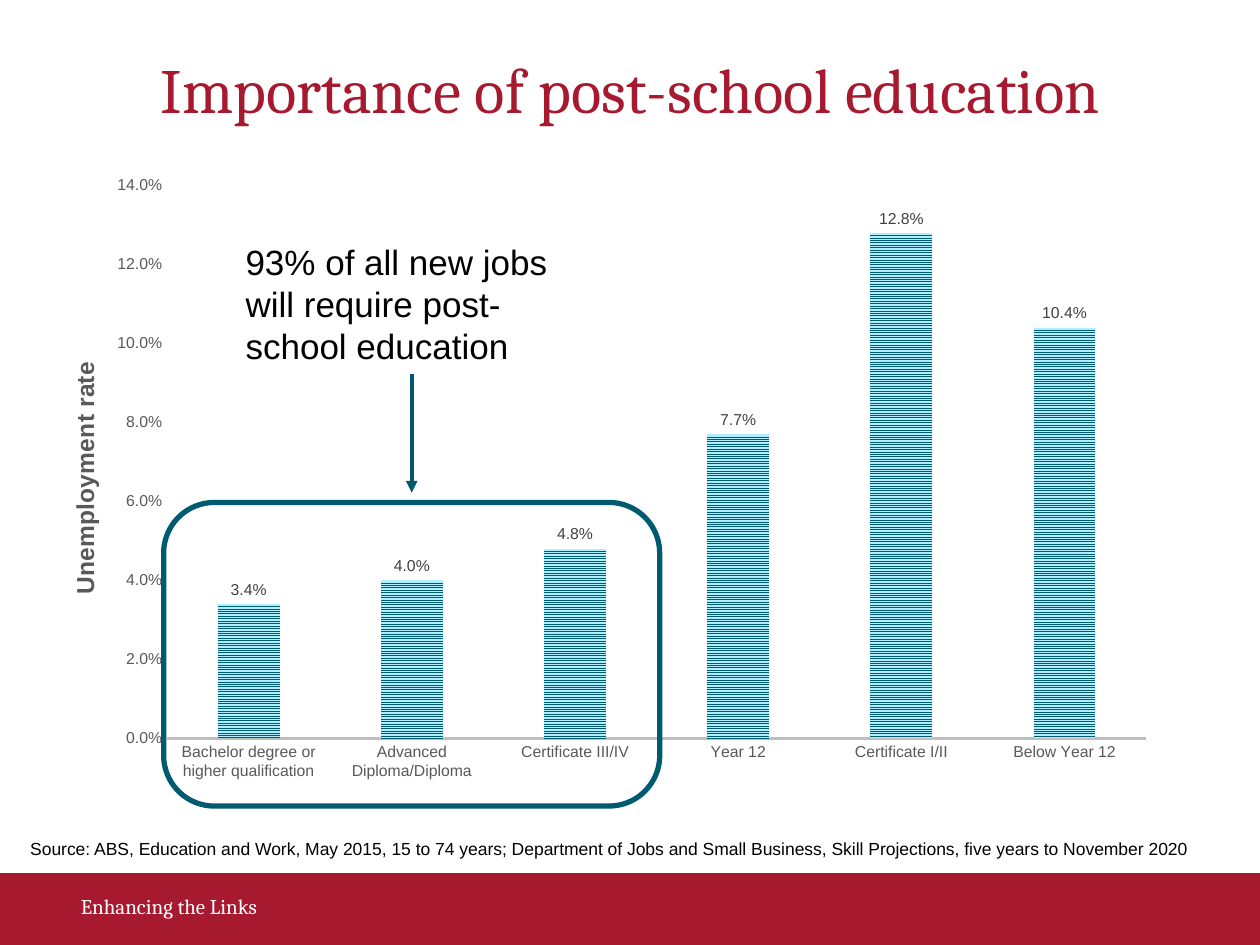
"""Build a slide on unemployment rates by level of education."""
from lxml import etree
from pptx import Presentation
from pptx.chart.data import CategoryChartData
from pptx.dml.color import RGBColor
from pptx.enum.chart import XL_CHART_TYPE, XL_LABEL_POSITION, XL_TICK_MARK
from pptx.enum.dml import MSO_PATTERN
from pptx.enum.shapes import MSO_CONNECTOR, MSO_SHAPE
from pptx.enum.text import MSO_ANCHOR, PP_ALIGN
from pptx.oxml.ns import qn
from pptx.util import Cm, Pt

COLUMNS = XL_CHART_TYPE.COLUMN_CLUSTERED
OUTSIDE = XL_LABEL_POSITION.OUTSIDE_END
NO_TICK = XL_TICK_MARK.NONE
STRIPES = MSO_PATTERN.NARROW_HORIZONTAL
STRAIGHT = MSO_CONNECTOR.STRAIGHT
RECTANGLE = MSO_SHAPE.RECTANGLE
ROUNDED = MSO_SHAPE.ROUNDED_RECTANGLE
TOP, MIDDLE = MSO_ANCHOR.TOP, MSO_ANCHOR.MIDDLE
LEFT, CENTER = PP_ALIGN.LEFT, PP_ALIGN.CENTER

RED = RGBColor(0xA6, 0x19, 0x2E)
TEAL = RGBColor(0x00, 0x5A, 0x70)
ARROW_TEAL = RGBColor(0x00, 0x58, 0x6E)
PALE_BLUE = RGBColor(0xAF, 0xEF, 0xFF)
WHITE = RGBColor(0xFF, 0xFF, 0xFF)
BLACK = RGBColor(0x00, 0x00, 0x00)
LABEL_GREY = RGBColor(0x40, 0x40, 0x40)
AXIS_GREY = RGBColor(0x59, 0x59, 0x59)
LINE_GREY = RGBColor(0xBF, 0xBF, 0xBF)

RATES = {
    "Bachelor degree or higher qualification": 0.034,
    "Advanced Diploma/Diploma": 0.04,
    "Certificate III/IV": 0.048,
    "Year 12": 0.077,
    "Certificate I/II": 0.128,
    "Below Year 12": 0.104,
}
PLOT_LAYOUT = {
    "layoutTarget": "inner", "xMode": "edge", "yMode": "edge",
    "x": "0.092", "y": "0.04", "w": "0.878", "h": "0.865",
}


class SlideBuilder:
    """Hold the style and the current slide."""

    heading_font = "Cambria"
    body_font = "Arial"

    def __init__(self, page):
        self.page = page

    def style(self, font, name, size, color, bold=False):
        font.name, font.size, font.bold = name, Pt(size), bold
        font.color.rgb = color

    def fill_text(self, box, text, name, size, color, align=LEFT, anchor=TOP, inset=(0, 0)):
        frame = box.text_frame
        frame.word_wrap = True
        frame.vertical_anchor = anchor
        frame.margin_left = frame.margin_right = Cm(inset[0])
        frame.margin_top = frame.margin_bottom = Cm(inset[1])
        para = frame.paragraphs[0]
        para.alignment = align
        span = para.add_run()
        span.text = text
        self.style(span.font, name, size, color)
        return para

    def title(self, text, left, top, width, height):
        box = self.page.shapes.title
        box.left, box.top, box.width, box.height = map(Cm, (left, top, width, height))
        para = self.fill_text(box, text, self.heading_font, 36, RED, CENTER)
        para.line_spacing = 0.8

    def text(self, text, place, name, size, color, **layout):
        box = self.page.shapes.add_textbox(*map(Cm, place))
        self.fill_text(box, text, name, size, color, **layout)

    def shape(self, kind, place, fill=None, outline=None):
        shape = self.page.shapes.add_shape(kind, *map(Cm, place))
        shape.shadow.inherit = False
        if fill is None:
            shape.fill.background()
        else:
            shape.fill.solid()
            shape.fill.fore_color.rgb = fill
        if outline is None:
            shape.line.fill.background()
        else:
            shape.line.color.rgb = outline
            shape.line.width = Pt(3)

    def arrow(self, *ends):
        arrow = self.page.shapes.add_connector(STRAIGHT, *map(Cm, ends))
        arrow.line.color.rgb = ARROW_TEAL
        arrow.line.width = Pt(2.25)
        properties = arrow.element.spPr
        etree.SubElement(properties.find(qn("a:ln")), qn("a:tailEnd"), type="triangle")
        etree.SubElement(properties, qn("a:effectLst"))

    def column_chart(self, rates, axis_title, place):
        data = CategoryChartData(number_format="0.0%")
        data.categories = list(rates)
        data.add_series("Series 1", list(rates.values()))
        chart = self.page.shapes.add_chart(COLUMNS, *map(Cm, place), data).chart
        chart.has_title = chart.has_legend = False
        self.style(chart.font, self.body_font, 10, BLACK)
        self.axes(chart, axis_title)
        self.columns(chart.plots[0])
        self.place_plot(chart)

    def axes(self, chart, axis_title):
        for axis in (chart.category_axis, chart.value_axis):
            axis.major_tick_mark = axis.minor_tick_mark = NO_TICK
            axis.has_major_gridlines = False
            self.style(axis.tick_labels.font, self.body_font, 9, AXIS_GREY)
        chart.category_axis.format.line.color.rgb = LINE_GREY
        chart.category_axis.format.line.width = Pt(1.5)
        values = chart.value_axis
        values.format.line.fill.background()
        values.minimum_scale, values.maximum_scale = 0, 0.14
        values.major_unit = 0.02
        values.tick_labels.number_format = "0.0%"
        values.tick_labels.number_format_is_linked = False
        span = values.axis_title.text_frame.paragraphs[0].add_run()
        span.text = axis_title
        self.style(span.font, self.body_font, 14, AXIS_GREY, bold=True)

    def columns(self, plot):
        plot.gap_width, plot.overlap = 164, -22
        plot.vary_by_categories = False
        fill = plot.series[0].format.fill
        fill.patterned()
        fill.pattern = STRIPES
        fill.fore_color.rgb, fill.back_color.rgb = TEAL, PALE_BLUE
        plot.has_data_labels = True
        labels = plot.data_labels
        labels.show_value = True
        labels.position = OUTSIDE
        labels.number_format = "0.0%"
        labels.number_format_is_linked = False
        self.style(labels.font, self.body_font, 9, LABEL_GREY)

    def place_plot(self, chart):
        area = chart.element.find(".//" + qn("c:plotArea"))
        for old in area.findall(qn("c:layout")):
            area.remove(old)
        layout = etree.Element(qn("c:layout"))
        manual = etree.SubElement(layout, qn("c:manualLayout"))
        for tag, value in PLOT_LAYOUT.items():
            etree.SubElement(manual, qn("c:" + tag), val=value)
        area.insert(0, layout)


def main():
    deck = Presentation()
    deck.slide_width, deck.slide_height = Cm(25.4), Cm(19.05)
    builder = SlideBuilder(deck.slides.add_slide(deck.slide_layouts[5]))
    heading, body = builder.heading_font, builder.body_font

    builder.shape(RECTANGLE, (0, 17.6, 25.4, 1.45), fill=RED)
    builder.title("Importance of post-school education", 1.63, 1.32, 22.15, 1.6)
    builder.text("Enhancing the Links", (1.63, 17.75, 18.08, 1.02),
                 heading, 12, WHITE, anchor=MIDDLE)
    builder.column_chart(RATES, "Unemployment rate", (1.3, 3.23, 22.48, 12.88))
    builder.shape(ROUNDED, (3.3, 10.13, 10, 6.12), outline=TEAL)
    builder.text("93% of all new jobs will require post-school education",
                 (4.7, 4.72, 7.19, 2.82), body, 20, BLACK, inset=(0.25, 0.13))
    builder.arrow(8.3, 7.54, 8.3, 9.93)
    builder.text("Source: ABS, Education and Work, May 2015, 15 to 74 years; "
                 "Department of Jobs and Small Business, Skill Projections, "
                 "five years to November 2020",
                 (0.36, 16.76, 23.88, 0.69), body, 10, BLACK, inset=(0.25, 0.13))
    deck.save("out.pptx")


if __name__ == "__main__":
    main()
